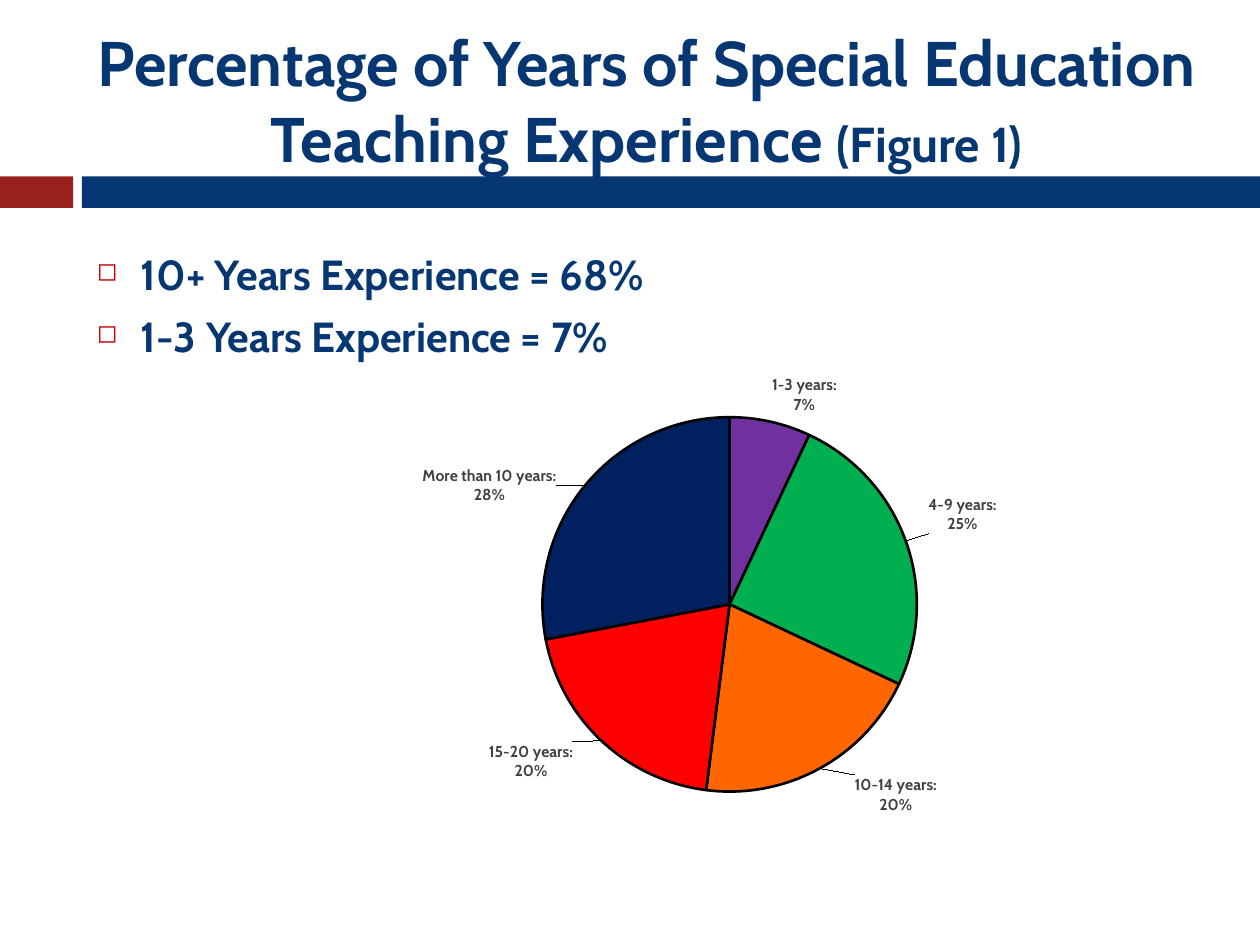
from copy import deepcopy
from dataclasses import dataclass

from lxml.etree import SubElement
from pptx import Presentation
from pptx.chart.data import CategoryChartData
from pptx.dml.color import RGBColor
from pptx.enum.chart import XL_CHART_TYPE, XL_LABEL_POSITION
from pptx.enum.shapes import MSO_SHAPE
from pptx.enum.text import MSO_ANCHOR, PP_ALIGN
from pptx.oxml.ns import qn
from pptx.util import Inches, Pt

WIDTH, HEIGHT = 10, 7.5


@dataclass(frozen=True)
class Theme:
    font: str = "Cabin"
    navy: str = "063772"
    red: str = "99201C"
    bullet: str = "C00000"
    label: str = "404040"
    outline: str = "000000"
    title_size: float = 36
    figure_size: float = 28
    body_size: float = 24
    chart_size: float = 10
    label_size: float = 9


@dataclass(frozen=True)
class Box:
    """Position and size in inches on the slide."""
    left: float
    top: float
    width: float
    height: float

    def emu(self) -> list:
        return [Inches(v) for v in (self.left, self.top, self.width, self.height)]


@dataclass(frozen=True)
class Slice:
    """A pie slice; dx and dy move its label by shares of the chart's size."""
    name: str
    value: float
    color: str
    dx: float = 0
    dy: float = 0


THEME = Theme()
MARGIN = 0.67
BAR_TOP, BAR_HEIGHT = 1.4, 0.25
RED_WIDTH, BAR_GAP = 0.58, 0.07
NAVY_LEFT = RED_WIDTH + BAR_GAP

BARS = [
    (Box(0, BAR_TOP, RED_WIDTH, BAR_HEIGHT), THEME.red),
    (Box(NAVY_LEFT, BAR_TOP, WIDTH - NAVY_LEFT, BAR_HEIGHT), THEME.navy),
]
TITLE = [
    ("Percentage of Years of Special Education Teaching Experience ", THEME.title_size),
    ("(Figure 1)", THEME.figure_size),
]
BULLETS = ["10+ Years Experience = 68%", "1-3 Years Experience = 7%"]
SLICES = [
    Slice("1-3 years:", 0.07, "7030A0"),
    Slice("4-9 years:", 0.25, "00B050", 0.02, -0.01),
    Slice("10-14 years:", 0.20, "FF6600", 0.04, 0),
    Slice("15-20 years:", 0.20, "FF0000", -0.03, -0.01),
    Slice("More than 10 years:", 0.28, "002060", -0.03, 0.05),
]


def rgb(color: str) -> RGBColor:
    return RGBColor.from_string(color)


def style_font(font, size: float, color: str, bold: bool = True) -> None:
    font.name, font.size, font.bold = THEME.font, Pt(size), bold
    font.color.rgb = rgb(color)


def add_run(p, text: str, size: float) -> None:
    r = p.add_run()
    r.text = text
    style_font(r.font, size, THEME.navy)


def add_bar(s, box: Box, color: str) -> None:
    sp = s.shapes.add_shape(MSO_SHAPE.RECTANGLE, *box.emu())
    sp.shadow.inherit = False
    sp.fill.solid()
    sp.fill.fore_color.rgb = rgb(color)
    sp.line.fill.background()


def add_text_frame(s, box: Box, anchor: MSO_ANCHOR):
    tf = s.shapes.add_textbox(*box.emu()).text_frame
    tf.word_wrap = True
    tf.vertical_anchor = anchor
    return tf


def add_bullet(p, indent: float) -> None:
    pPr = p._p.get_or_add_pPr()
    pPr.set("marL", str(Inches(indent)))
    pPr.set("indent", str(-Inches(indent)))
    color = SubElement(pPr, qn("a:buClr"))
    SubElement(color, qn("a:srgbClr"), val=THEME.bullet)
    SubElement(pPr, qn("a:buSzPct"), val="60000")
    SubElement(pPr, qn("a:buChar"), char="◻")


def add_layout(parent, index: int, **values: float) -> None:
    """Insert a manual layout given in shares of the chart's size."""
    for old in parent.findall(qn("c:layout")):
        parent.remove(old)
    layout = SubElement(parent, qn("c:layout"))
    manual = SubElement(layout, qn("c:manualLayout"))
    for tag, value in values.items():
        SubElement(manual, qn(f"c:{tag}"), val=str(value))
    parent.insert(index, layout)


def label_slices(series) -> None:
    labels = series.data_labels
    labels.number_format, labels.number_format_is_linked = "0%", False
    labels.position = XL_LABEL_POSITION.OUTSIDE_END
    labels.show_value = labels.show_category_name = True
    labels.show_percentage = False
    style_font(labels.font, THEME.label_size, THEME.label)

    # Two-line labels, each shifted from its default place
    d = labels._element
    for leader in d.findall(qn("c:showLeaderLines")):
        d.remove(leader)
    SubElement(d, qn("c:separator")).text = "\n"
    shared = [deepcopy(child) for child in d]
    SubElement(d, qn("c:showLeaderLines"), val="1")
    for i, item in enumerate(SLICES):
        label = SubElement(d, qn("c:dLbl"))
        SubElement(label, qn("c:idx"), val=str(i))
        label.extend(deepcopy(shared))
        if item.dx or item.dy:
            add_layout(label, 1, x=item.dx, y=item.dy)
        d.insert(i, label)


def add_pie(s, box: Box) -> None:
    data = CategoryChartData(number_format="0%")
    data.categories = [item.name for item in SLICES]
    data.add_series("Series 1", [item.value for item in SLICES])
    chart = s.shapes.add_chart(XL_CHART_TYPE.PIE, *box.emu(), data).chart
    chart.has_legend = chart.has_title = False
    style_font(chart.font, THEME.chart_size, THEME.outline, bold=False)
    plot = chart.plots[0]
    plot.vary_by_categories = True
    series = plot.series[0]
    for i, item in enumerate(SLICES):
        fmt = series.points[i].format
        fmt.fill.solid()
        fmt.fill.fore_color.rgb = rgb(item.color)
        fmt.line.color.rgb = rgb(THEME.outline)
        fmt.line.width = Pt(1.5)
    label_slices(series)
    area = chart._chartSpace.chart.plotArea
    add_layout(area, 0, layoutTarget="inner", xMode="edge", yMode="edge",
               x=0.29, y=0.13, w=0.48, h=0.77)


def main() -> None:
    prs = Presentation()
    prs.slide_width, prs.slide_height = Inches(WIDTH), Inches(HEIGHT)
    s = prs.slides.add_slide(prs.slide_layouts[6])

    # Divider bars
    for box, color in BARS:
        add_bar(s, box, color)

    # Title
    p = add_text_frame(s, Box(MARGIN, 0.25, 8.92, 1.08), MSO_ANCHOR.MIDDLE).paragraphs[0]
    p.alignment = PP_ALIGN.CENTER
    for text, size in TITLE:
        add_run(p, text, size)

    # Pie chart
    add_pie(s, Box(2.5, 2.81, 6.21, 3.86))

    # Bullet points
    tf = add_text_frame(s, Box(MARGIN, 1.92, 8.83, 4.75), MSO_ANCHOR.TOP)
    for i, text in enumerate(BULLETS):
        p = tf.add_paragraph() if i else tf.paragraphs[0]
        add_bullet(p, 0.35)
        if i:
            p.space_before = Pt(7)
        add_run(p, text, THEME.body_size)

    prs.save("out.pptx")


if __name__ == "__main__":
    main()
